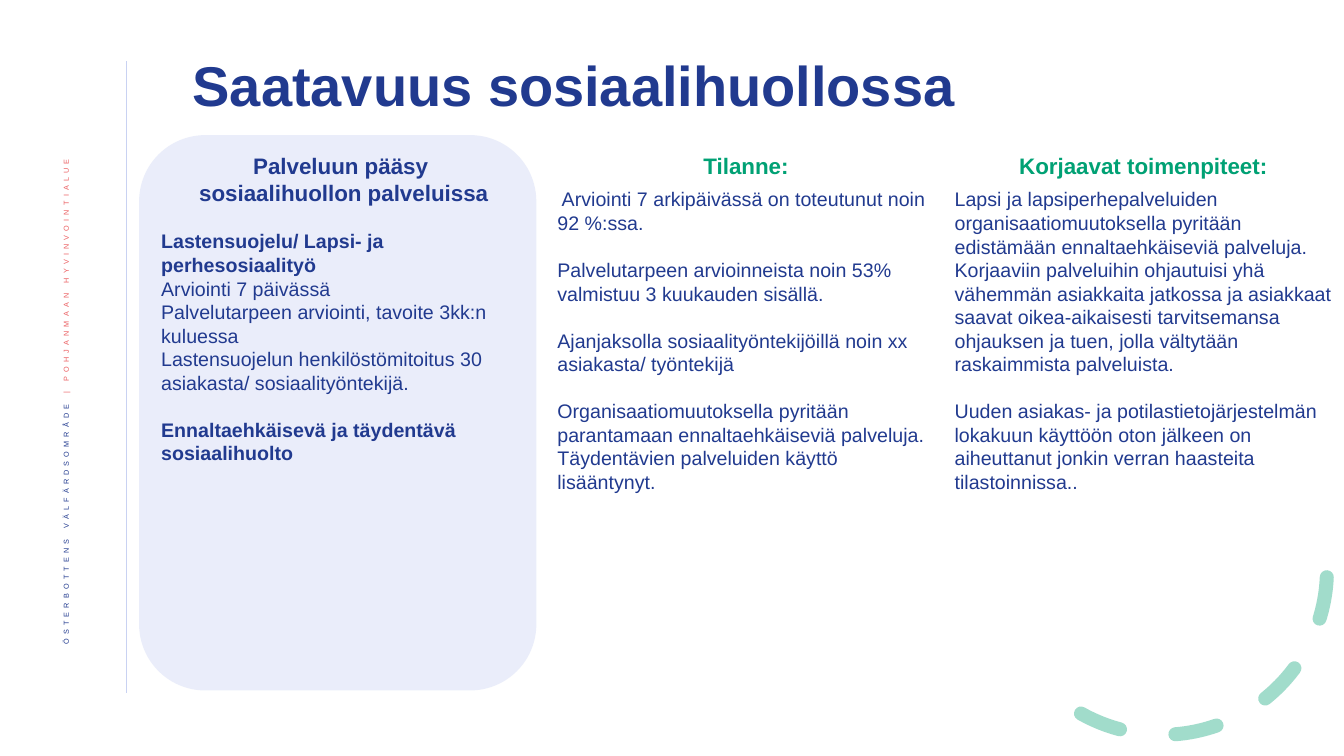
from lxml import etree
from pptx import Presentation
from pptx.dml.color import RGBColor
from pptx.enum.dml import MSO_LINE
from pptx.enum.shapes import MSO_CONNECTOR, MSO_SHAPE
from pptx.enum.text import MSO_ANCHOR, MSO_AUTO_SIZE, PP_ALIGN
from pptx.oxml.ns import qn
from pptx.util import Inches, Pt

NAVY = RGBColor(0x21, 0x3A, 0x8F)
GREEN = RGBColor(0x00, 0xA1, 0x74)
CORAL = RGBColor(0xEB, 0x5C, 0x5F)
LAVENDER = RGBColor(0xC9, 0xD2, 0xF2)

HEADING_SIZE = 16
BODY_SIZE = 14
LINE_FACTOR = 1.2
BODY_LINE = BODY_SIZE * LINE_FACTOR

# Each body paragraph: text, bold, preceded by a gap
ACCESS = [
    ("Lastensuojelu/ Lapsi- ja perhesosiaalityö", True, True),
    ("Arviointi 7 päivässä", False, False),
    ("Palvelutarpeen arviointi, tavoite 3kk:n kuluessa", False, False),
    ("Lastensuojelun henkilöstömitoitus 30 asiakasta/ sosiaalityöntekijä.", False, False),
    ("Ennaltaehkäisevä ja täydentävä sosiaalihuolto", True, True),
]
SITUATION = [
    (" Arviointi 7 arkipäivässä on toteutunut noin 92 %:ssa.", False, False),
    ("Palvelutarpeen arvioinneista noin 53% valmistuu 3 kuukauden sisällä.", False, True),
    ("Ajanjaksolla sosiaalityöntekijöillä noin xx asiakasta/ työntekijä", False, True),
    ("Organisaatiomuutoksella pyritään parantamaan ennaltaehkäiseviä palveluja. "
     "Täydentävien palveluiden käyttö lisääntynyt.", False, True),
]
ACTIONS = [
    ("Lapsi ja lapsiperhepalveluiden organisaatiomuutoksella pyritään edistämään "
     "ennaltaehkäiseviä palveluja. Korjaaviin palveluihin ohjautuisi yhä vähemmän "
     "asiakkaita jatkossa ja asiakkaat saavat oikea-aikaisesti tarvitsemansa ohjauksen "
     "ja tuen, jolla vältytään raskaimmista palveluista.", False, False),
    ("Uuden asiakas- ja potilastietojärjestelmän lokakuun käyttöön oton jälkeen on "
     "aiheuttanut jonkin verran haasteita tilastoinnissa..", False, True),
]


def apply_format(target, values):
    for name, value in values.items():
        setattr(target, name, value)


def add_span(para, text, size, color, bold=False):
    span = para.add_run()
    span.text = text
    apply_format(span.font, {"name": "Arial", "size": Pt(size), "bold": bold})
    span.font.color.rgb = color
    return span


def set_alpha(fill, percent):
    """Make a solid fill partly transparent."""
    color = fill._xPr.find(qn("a:solidFill"))[0]
    etree.SubElement(color, qn("a:alpha")).set("val", str(percent * 1000))


def add_title(page, text):
    title = page.shapes.title
    apply_format(title, {"left": Inches(1.81), "top": Inches(0.45),
                         "width": Inches(10.2), "height": Inches(0.85)})
    apply_format(title.text_frame, {"vertical_anchor": MSO_ANCHOR.MIDDLE,
                                    "auto_size": MSO_AUTO_SIZE.NONE})
    para = title.text_frame.paragraphs[0]
    apply_format(para, {"alignment": PP_ALIGN.LEFT, "line_spacing": 0.9})
    add_span(para, text, 40, NAVY, bold=True)


def add_side_rule(page):
    rule = page.shapes.add_connector(
        MSO_CONNECTOR.STRAIGHT, Inches(1.25), Inches(0.61), Inches(1.25), Inches(6.88))
    rule.line.color.rgb = LAVENDER
    rule.line.width = Pt(0.5)
    etree.SubElement(rule._element.spPr, qn("a:effectLst"))


def add_side_label(page):
    """Add the region's name, running upwards along the left edge."""
    box = page.shapes.add_textbox(Inches(0.42), Inches(1.42), Inches(0.52), Inches(5.73))
    frame = box.text_frame
    apply_format(frame, {"word_wrap": True, "vertical_anchor": MSO_ANCHOR.MIDDLE})
    frame._txBody.bodyPr.set("vert", "vert270")
    para = frame.paragraphs[0]
    apply_format(para, {"alignment": PP_ALIGN.RIGHT, "line_spacing": 0.9})
    for text, color in (("ÖSTERBOTTENS VÄLFÄRDSOMRÅDE ", NAVY),
                        ("| POHJANMAAN HYVINVOINTIALUE ", CORAL)):
        span = add_span(para, text, 9, color)
        properties = span._r.get_or_add_rPr()
        properties.set("baseline", "30000")
        properties.set("spc", "300")


def add_dashed_arc(page):
    """Add the dashed curve in the lower right corner."""
    arc = page.shapes.add_shape(
        MSO_SHAPE.ARC, Inches(9.89), Inches(4.02), Inches(3.27), Inches(3.27))
    arc.shadow.inherit = False
    arc.rotation = 98.9
    for index, degrees in enumerate((263.62, 29.69)):
        arc.adjustments[index] = degrees * 0.6  # 60000 units a degree, scaled by 100000
    arc.fill.background()
    apply_format(arc.line, {"width": Pt(10), "dash_style": MSO_LINE.DASH})
    arc.line.color.rgb = GREEN
    set_alpha(arc.line.fill, 36)
    arc.line._ln.set("cap", "rnd")


def add_panel(page):
    panel = page.shapes.add_shape(
        MSO_SHAPE.ROUNDED_RECTANGLE, Inches(1.38), Inches(1.34), Inches(3.94), Inches(5.51))
    panel.shadow.inherit = False
    panel.fill.solid()
    panel.fill.fore_color.rgb = LAVENDER
    set_alpha(panel.fill, 38)
    panel.line.fill.background()


def add_column(page, left, width, height, headings, color, heading_gap, body):
    box = page.shapes.add_textbox(Inches(left), Inches(1.46), Inches(width), Inches(height))
    frame = box.text_frame
    frame.word_wrap = True
    for index, heading in enumerate(headings):
        para = frame.add_paragraph() if index else frame.paragraphs[0]
        apply_format(para, {"alignment": PP_ALIGN.CENTER,
                            "line_spacing": Pt(HEADING_SIZE * LINE_FACTOR),
                            "space_after": Pt(heading_gap)})
        add_span(para, heading, HEADING_SIZE, color, bold=True)
    for text, bold, gap in body:
        para = frame.add_paragraph()
        apply_format(para, {"alignment": PP_ALIGN.LEFT,
                            "line_spacing": Pt(BODY_LINE),
                            "space_before": Pt(BODY_LINE if gap else 0)})
        add_span(para, text, BODY_SIZE, NAVY, bold)


def main():
    deck = Presentation()
    apply_format(deck, {"slide_width": Inches(13.33), "slide_height": Inches(7.5)})
    page = deck.slides.add_slide(deck.slide_layouts[5])
    add_side_rule(page)
    add_side_label(page)
    add_dashed_arc(page)
    add_title(page, "Saatavuus sosiaalihuollossa")
    add_panel(page)
    add_column(page, 1.5, 3.82, 4.64,
               ["Palveluun pääsy ", "sosiaalihuollon palveluissa"], NAVY, 0, ACCESS)
    add_column(page, 5.43, 3.94, 3.75, ["Tilanne:"], GREEN, 6, SITUATION)
    add_column(page, 9.37, 3.94, 3.82, ["Korjaavat toimenpiteet:"], GREEN, 6, ACTIONS)
    deck.save("out.pptx")


if __name__ == "__main__":
    main()
